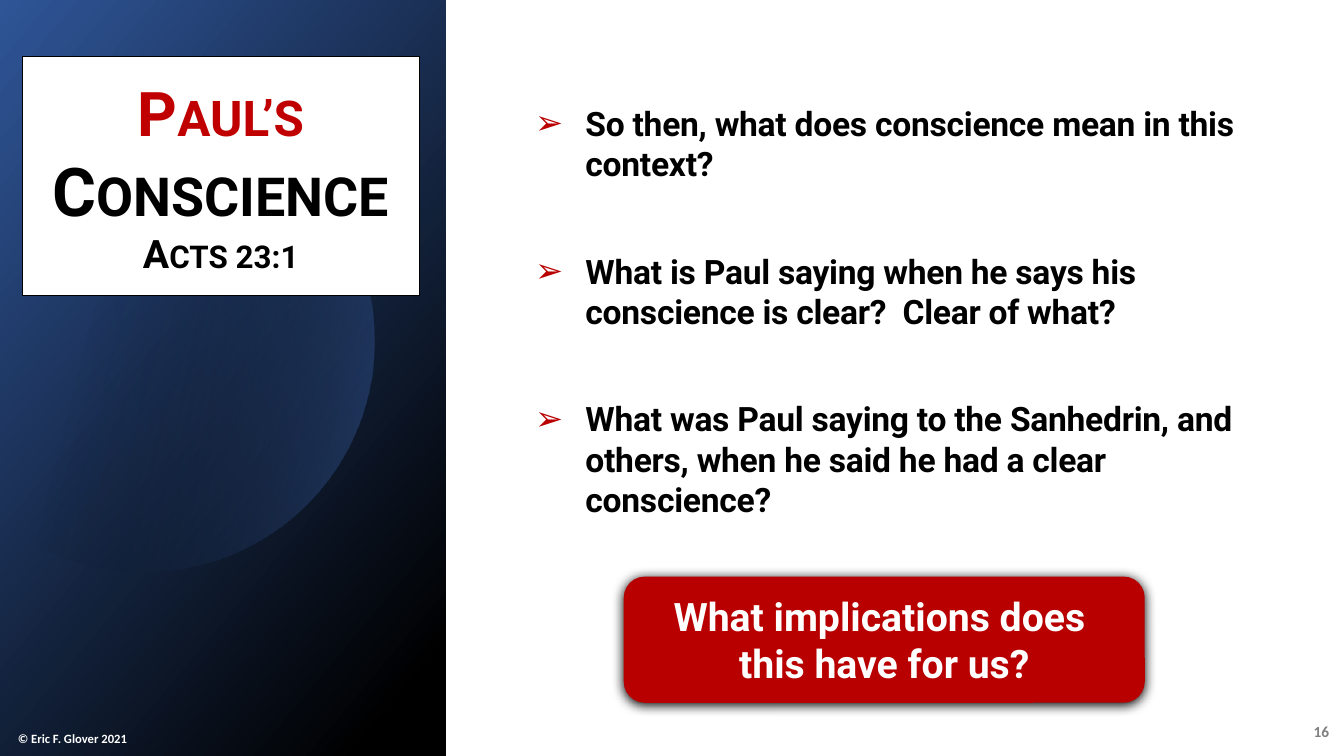
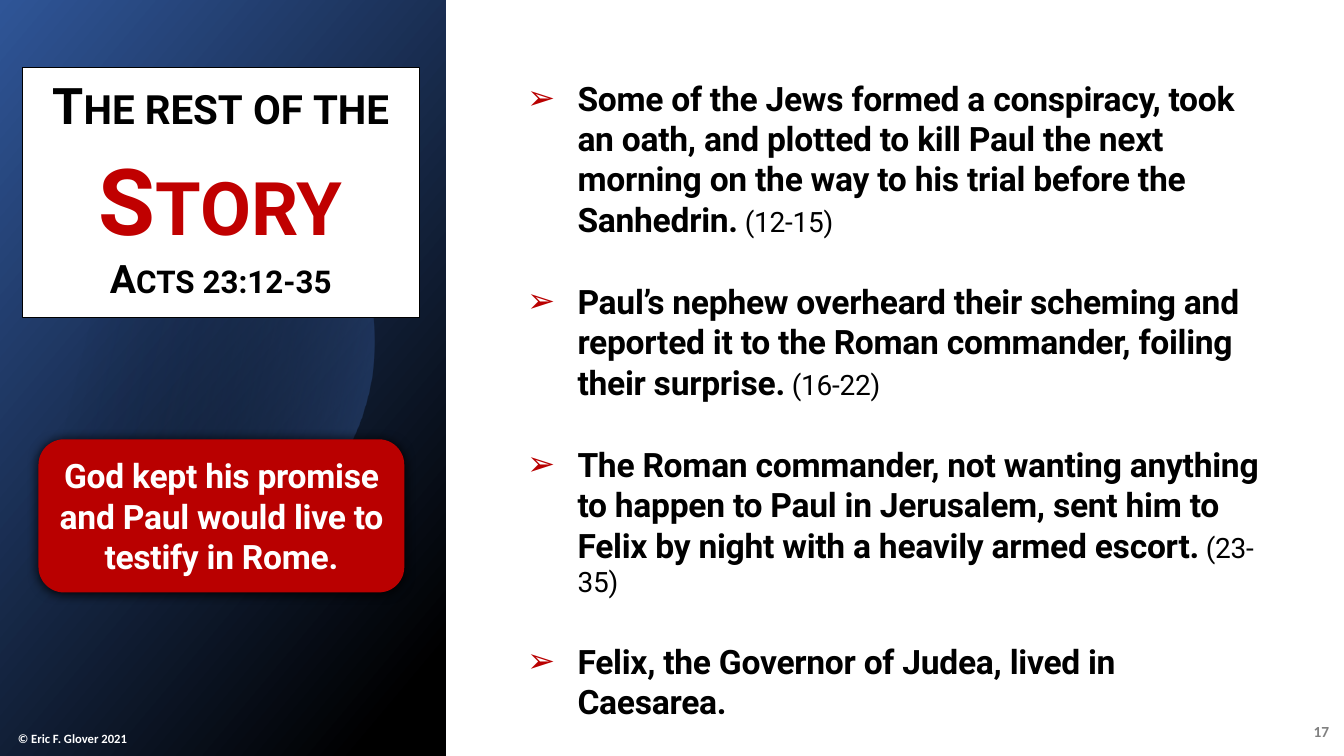
from dataclasses import dataclass
from math import acos, cos, pi, sin

from lxml.etree import SubElement
from pptx import Presentation
from pptx.dml.color import RGBColor
from pptx.enum.shapes import MSO_SHAPE
from pptx.enum.text import MSO_ANCHOR, MSO_AUTO_SIZE, PP_ALIGN
from pptx.oxml.ns import qn
from pptx.util import Cm, Pt


@dataclass(frozen=True)
class Theme:
    """Colours, fonts and type sizes of the deck."""
    black: str = "000000"
    white: str = "FFFFFF"
    gray: str = "808080"
    navy: str = "2F5597"
    blue: str = "4472C4"
    red: str = "C00000"
    crimson: str = "B90000"
    font: str = "Roboto"
    small_font: str = "Calibri"
    story: int = 66
    headline: int = 48
    lead: int = 44
    overline: int = 36
    large: int = 28
    body: int = 24
    verse: int = 20
    number: int = 11
    footer: int = 9


T = Theme()


class Deck:
    """Holds the presentation, its style and the current slide."""

    def __init__(self):
        """Start an empty widescreen presentation."""
        self.prs = Presentation()
        self.prs.slide_width, self.prs.slide_height = Cm(33.87), Cm(19.05)
        self.s = None

    def run(self, p, text, size, color, bold=True, font=T.font, **attrs):
        """Add one run, with line breaks where the text has them."""
        for i, line in enumerate(text.split("\n")):
            if i:
                p.add_line_break()
            if not line:
                continue
            r = p.add_run()
            r.text = line
            r.font.size, r.font.bold, r.font.name = Pt(size), bold, font
            r.font.color.rgb = RGBColor.from_string(color)
            for name, value in attrs.items():
                r.font._element.set(name, value)

    def paragraph(self, tf, first, align, after=0):
        """Return the first or a new paragraph with its spacing set."""
        p = tf.paragraphs[0] if first else tf.add_paragraph()
        p.alignment = align
        p.space_before, p.space_after = Pt(0), Pt(after)
        return p

    def frame(self, sp, anchor):
        """Return the wrapped text frame of a shape."""
        tf = sp.text_frame
        tf.word_wrap, tf.auto_size = True, MSO_AUTO_SIZE.NONE
        tf.vertical_anchor = anchor
        return tf

    def place(self, sp, box):
        """Move a placeholder into a box and above the panel."""
        sp.left, sp.top, sp.width, sp.height = map(Cm, box)
        self.s.shapes.element.append(sp.element)

    def gradient(self, sp, angle, stops):
        """Fill a plain shape with a clockwise gradient of position, colour, opacity."""
        sp.shadow.inherit = False
        sp.line.fill.background()
        sp.fill.gradient()
        sp.fill.gradient_angle = 360 - angle
        for stop, (position, color, _) in zip(sp.fill.gradient_stops, stops):
            stop.position = position
            stop.color.rgb = RGBColor.from_string(color)
        colors = list(sp.element.spPr.iter(qn("a:srgbClr")))
        for clr, (_, _, opacity) in zip(colors, stops):
            if opacity < 100:
                SubElement(clr, qn("a:alpha"), val=str(opacity * 1000))

    def panel(self):
        """Draw the gradient side panel with its clipped disc."""
        band = self.s.shapes.add_shape(MSO_SHAPE.RECTANGLE, 0, 0, Cm(11.23), self.prs.slide_height)
        self.gradient(band, 40, [(0, T.navy, 100), (0.92, T.black, 100)])
        cx, cy, radius, steps = 3.63, 8.59, 5.8, 120
        limit = pi - acos(cx / radius)
        angles = [limit * (2 * i / steps - 1) for i in range(steps + 1)]
        points = [(Cm(cx + radius * cos(a)), Cm(cy + radius * sin(a))) for a in angles]
        outline = self.s.shapes.build_freeform(*points[0])
        outline.add_line_segments(points[1:], close=True)
        self.gradient(outline.convert_to_shape(), 14, [(0.29, T.black, 0), (1, T.blue, 43)])

    def label(self, box, text, size, color, align, anchor):
        """Add a small line of text."""
        tf = self.frame(self.s.shapes.add_textbox(*map(Cm, box)), anchor)
        self.run(self.paragraph(tf, True, align), text, size, color, font=T.small_font)

    def slide(self, number):
        """Begin a slide with the parts that all slides share."""
        self.s = self.prs.slides.add_slide(self.prs.slide_layouts[1])
        self.panel()
        self.label((32.51, 17.93, 1.24, 1.02), str(number), T.number, T.gray,
                   PP_ALIGN.RIGHT, MSO_ANCHOR.MIDDLE)
        self.label((0.2, 18.21, 3.99, 0.71), "© Eric F. Glover 2021", T.footer, T.white,
                   PP_ALIGN.LEFT, MSO_ANCHOR.BOTTOM)

    def title(self, top, height, paragraphs, bottom=0):
        """Set the small-caps title on a rounded white card."""
        sp = self.s.shapes.title
        self.place(sp, (0.56, top, 10.01, height))
        geom = SubElement(sp.element.spPr, qn("a:prstGeom"), prst="roundRect")
        SubElement(geom, qn("a:avLst"))
        sp.fill.solid()
        sp.fill.fore_color.rgb = RGBColor.from_string(T.white)
        sp.line.color.rgb = RGBColor.from_string(T.black)
        sp.line.width = Pt(0.75)
        tf = self.frame(sp, MSO_ANCHOR.MIDDLE)
        tf.margin_left = tf.margin_right = tf.margin_top = 0
        tf.margin_bottom = Cm(bottom)
        for i, runs in enumerate(paragraphs):
            p = self.paragraph(tf, i == 0, PP_ALIGN.CENTER, 6)
            for text, size, color in runs:
                self.run(p, text, size, color, cap="small")

    def bullets(self, box, items, after):
        """Fill the body with arrow bullets of statement and verses."""
        sp = self.s.placeholders[1]
        self.place(sp, box)
        tf = self.frame(sp, MSO_ANCHOR.TOP)
        for i, (text, verses) in enumerate(items):
            p = self.paragraph(tf, i == 0, PP_ALIGN.LEFT, after)
            pPr = p._p.get_or_add_pPr()
            pPr.set("marL", str(Cm(1.27)))
            pPr.set("indent", str(-Cm(1.27)))
            SubElement(SubElement(pPr, qn("a:buClr")), qn("a:srgbClr"), val=T.crimson)
            SubElement(pPr, qn("a:buChar"), char="➢")
            self.run(p, text, T.body, T.black, spc="-20")
            if verses:
                self.run(p, f" ({verses})", T.verse, T.black, bold=False, spc="-20")

    def callout(self, box, text, size, **attrs):
        """Add a rounded red box with a soft shadow."""
        sp = self.s.shapes.add_shape(MSO_SHAPE.ROUNDED_RECTANGLE, *map(Cm, box))
        sp.fill.solid()
        sp.fill.fore_color.rgb = RGBColor.from_string(T.crimson)
        sp.line.fill.background()
        sp.shadow.inherit = False
        effects = sp.element.spPr.find(qn("a:effectLst"))
        shadow = SubElement(effects, qn("a:outerShdw"), blurRad=str(Pt(8.5)),
                            dist=str(Pt(1)), dir="5400000", algn="t", rotWithShape="0")
        SubElement(shadow, qn("a:srgbClr"), val=T.black)
        tf = self.frame(sp, MSO_ANCHOR.MIDDLE)
        self.run(self.paragraph(tf, True, PP_ALIGN.CENTER), text, size, T.white, **attrs)


def main():
    """Build both slides and save them."""
    d = Deck()

    d.slide(16)
    d.title(1.42, 6.02, [[("Paul’s ", T.lead, T.red), ("Conscience\n", T.headline, T.black),
                          ("Acts 23:1", T.large, T.black)]])
    d.bullets((13.23, 2.46, 18.26, 10.85), [
        ("So then, what does conscience mean in this context?", ""),
        ("What is Paul saying when he says his conscience is clear?  Clear of what?", ""),
        ("What was Paul saying to the Sanhedrin, and others, when he said he had "
         "a clear conscience?", ""),
    ], after=48)
    d.callout((15.72, 14.53, 13.13, 3.18), "What implications does \nthis have for us?", T.large)

    d.slide(17)
    d.title(1.7, 6.3, [[("The rest of the", T.overline, T.black)],
                       [("Story\n", T.story, T.red), ("Acts 23:12-35", T.large, T.black)]],
            bottom=0.25)
    d.bullets((13.03, 1.83, 19.18, 15.77), [
        ("Some of the Jews formed a conspiracy, took an oath, and plotted to kill Paul the next "
         "morning on the way to his trial before the Sanhedrin.", "12-15"),
        ("Paul’s nephew overheard their scheming and reported it to the Roman commander, "
         "foiling their surprise.", "16-22"),
        ("The Roman commander, not wanting anything to happen to Paul in Jerusalem, sent him to "
         "Felix by night with a heavily armed escort.", "23-35"),
        ("Felix, the Governor of Judea, lived in Caesarea.", ""),
    ], after=30)
    d.callout((0.97, 11.07, 9.22, 3.86),
              "God kept his promise and Paul would live to testify in Rome.", T.body, spc="-20")

    d.prs.save("out.pptx")


if __name__ == "__main__":
    main()
